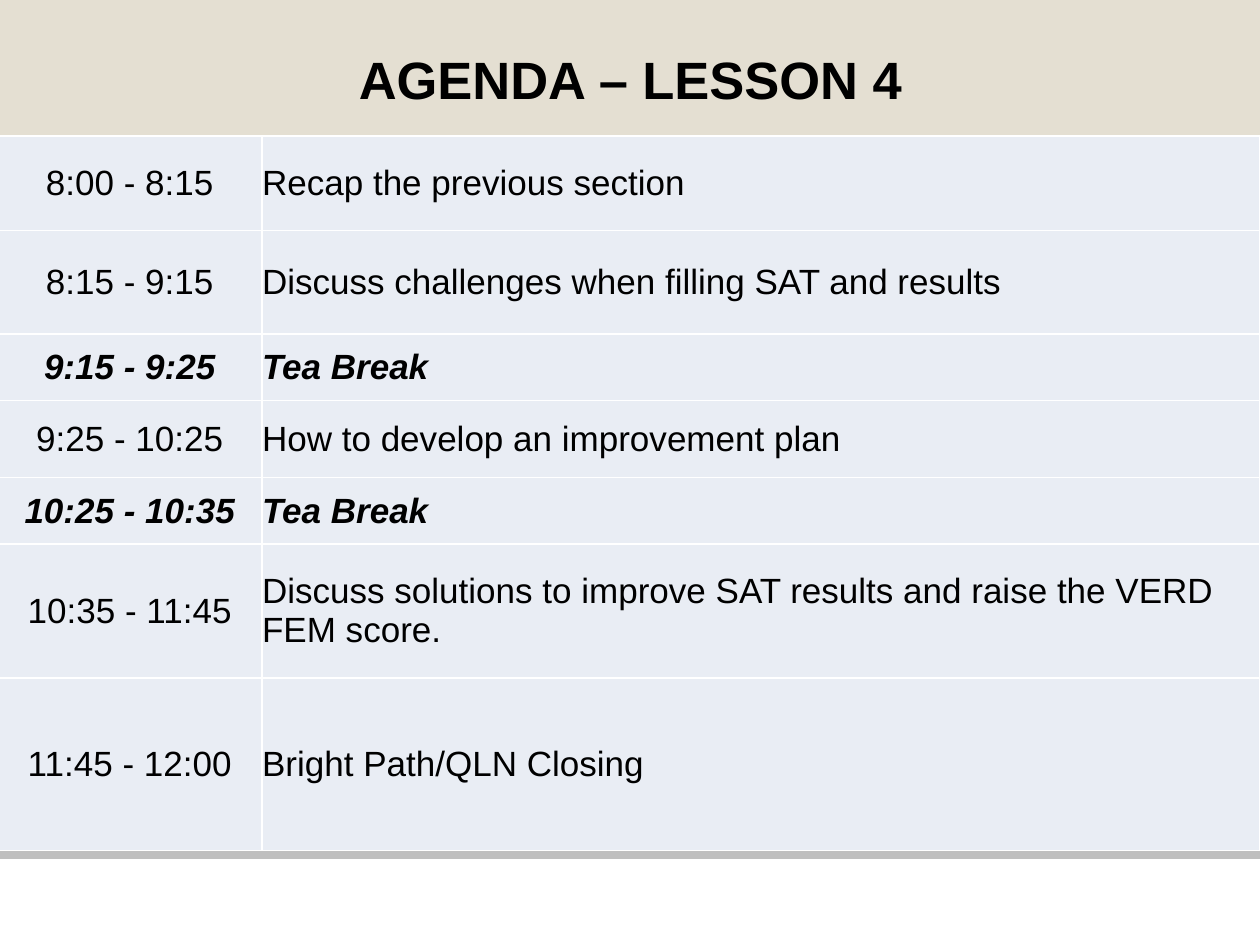
from dataclasses import dataclass

from lxml.etree import SubElement
from pptx import Presentation
from pptx.dml.color import RGBColor
from pptx.enum.shapes import MSO_SHAPE as Preset
from pptx.enum.text import MSO_ANCHOR as Anchor, PP_ALIGN as Align
from pptx.oxml.ns import qn
from pptx.slide import Slide
from pptx.table import _Cell as Cell
from pptx.util import Inches, Pt

COLORS = {"band": "E4DFD2", "rule": "BFBFBF", "cell": "E9EDF4",
          "border": "FFFFFF", "text": "000000"}
WIDTH, HEIGHT = 10, 7.5
BAND_HEIGHT = 1.08
TABLE_LEFT = -0.02
COLUMNS = (2.1, 7.92)
NO_MARGINS = dict.fromkeys(
    ("margin_left", "margin_right", "margin_top", "margin_bottom"), 0)


@dataclass(frozen=True)
class Session:
    time: str
    topic: str
    height: float
    is_break: bool = False


SESSIONS = (
    Session("8:00 - 8:15", "Recap the previous section", 0.75),
    Session("8:15 - 9:15", "Discuss challenges when filling SAT and results", 0.82),
    Session("9:15 - 9:25", "Tea Break", 0.53, True),
    Session("9:25 - 10:25", "How to develop an improvement plan", 0.61),
    Session("10:25 - 10:35", "Tea Break", 0.53, True),
    Session("10:35 - 11:45",
            "Discuss solutions to improve SAT results and raise the VERD FEM score.", 1.06),
    Session("11:45 - 12:00", "Bright Path/QLN Closing", 1.37),
)


def color(name: str) -> RGBColor:
    return RGBColor.from_string(COLORS[name])


def apply(target: object, values: dict) -> None:
    for name, value in values.items():
        setattr(target, name, value)


def write(para, text: str, size: int, **style) -> None:
    span = para.add_run()
    span.text = text
    apply(span.font, {"name": "Arial", "size": Pt(size), **style})
    span.font.color.rgb = color("text")


def add_bar(page: Slide, top: float, height: float, fill: str, line: float = 0) -> None:
    """Draw a rectangle across the full slide width."""
    bar = page.shapes.add_shape(Preset.RECTANGLE, 0, Inches(top),
                                Inches(WIDTH), Inches(height))
    bar.shadow.inherit = False
    bar.fill.solid()
    bar.fill.fore_color.rgb = color(fill)
    if line:
        bar.line.color.rgb = color(fill)
        bar.line.width = Pt(line)
    else:
        bar.line.fill.background()


def add_title(page: Slide, text: str) -> None:
    title = page.shapes.title
    page.shapes.element.append(title.element)  # in front of the band
    apply(title, {"left": Inches(0.38), "top": Inches(0.42),
                  "width": Inches(9.25), "height": Inches(0.46)})
    apply(title.text_frame, {**NO_MARGINS, "word_wrap": True,
                             "vertical_anchor": Anchor.TOP})
    para = title.text_frame.paragraphs[0]
    apply(para, {"alignment": Align.CENTER, "line_spacing": Pt(32.7),
                 "space_before": Pt(1.6)})
    write(para, text, 30, bold=True)


def add_borders(cell: Cell) -> None:
    properties = cell._tc.get_or_add_tcPr()
    for position, side in enumerate(("lnL", "lnR", "lnT", "lnB")):
        line = properties.makeelement(qn(f"a:{side}"), {"w": str(Pt(1))})
        fill = SubElement(line, qn("a:solidFill"))
        SubElement(fill, qn("a:srgbClr"), val=COLORS["border"])
        properties.insert(position, line)


def fill_cell(cell: Cell, text: str, alignment: Align, is_break: bool) -> None:
    apply(cell, {**NO_MARGINS, "vertical_anchor": Anchor.MIDDLE})
    cell.fill.solid()
    cell.fill.fore_color.rgb = color("cell")
    add_borders(cell)
    para = cell.text_frame.paragraphs[0]
    para.alignment = alignment
    write(para, text, 20, bold=is_break, italic=is_break)


def add_agenda(page: Slide) -> None:
    height = sum(session.height for session in SESSIONS)
    table = page.shapes.add_table(
        len(SESSIONS), len(COLUMNS), Inches(TABLE_LEFT), Inches(BAND_HEIGHT),
        Inches(sum(COLUMNS)), Inches(height)).table
    apply(table, {"first_row": False, "horz_banding": False})
    for column, width in zip(table.columns, COLUMNS):
        column.width = Inches(width)
    for row, session in zip(table.rows, SESSIONS):
        row.height = Inches(session.height)
        time, topic = row.cells
        fill_cell(time, session.time, Align.CENTER, session.is_break)
        fill_cell(topic, session.topic, Align.LEFT, session.is_break)


def main() -> None:
    deck = Presentation()
    apply(deck, {"slide_width": Inches(WIDTH), "slide_height": Inches(HEIGHT)})
    page = deck.slides.add_slide(deck.slide_layouts.get_by_name("Title Only"))
    add_bar(page, 0.9 * HEIGHT, 0.05, "rule", line=2)
    add_bar(page, 0, BAND_HEIGHT, "band")
    add_title(page, "AGENDA – LESSON 4")
    add_agenda(page)
    deck.save("out.pptx")


if __name__ == "__main__":
    main()
